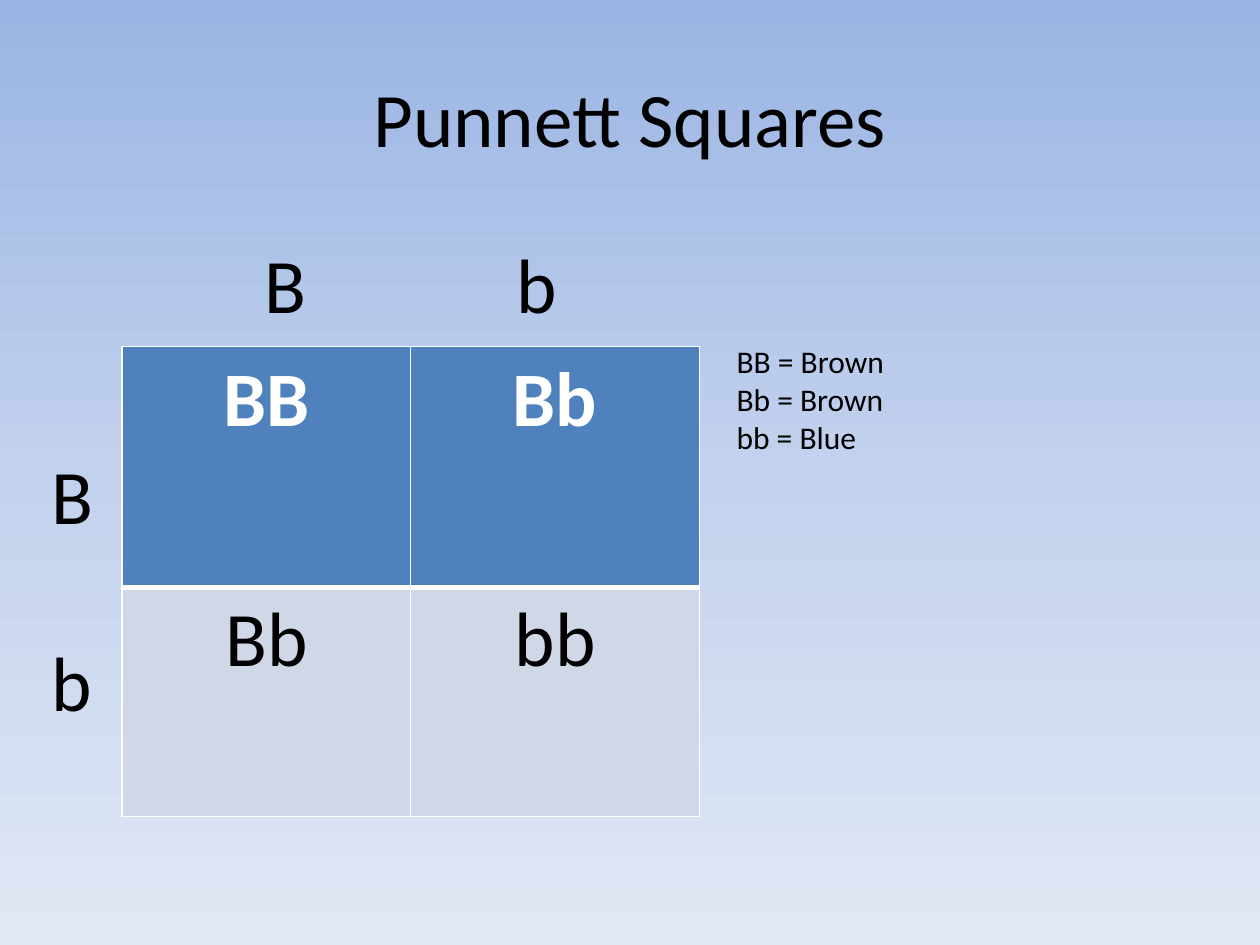
from copy import deepcopy

from lxml.etree import SubElement
from pptx import Presentation
from pptx.dml.color import RGBColor
from pptx.enum.text import MSO_ANCHOR, PP_ALIGN
from pptx.oxml.ns import qn
from pptx.util import Cm, Pt

BLACK = RGBColor(0x00, 0x00, 0x00)
WHITE = RGBColor(0xFF, 0xFF, 0xFF)
BLUE = RGBColor(0x4F, 0x81, 0xBD)
PALE = RGBColor(0xD0, 0xD8, 0xE8)
SKY = [RGBColor(0x9A, 0xB5, 0xE4), RGBColor(0xC2, 0xD1, 0xED), RGBColor(0xE1, 0xE8, 0xF5)]

LARGE = {"name": "Calibri", "size": Pt(44), "bold": False}
SMALL = {**LARGE, "size": Pt(18)}


def set_font(font, formats, color=BLACK):
    for name, value in formats.items():
        setattr(font, name, value)
    font.color.rgb = color


def add_background(s):
    fill = s.background.fill
    fill.gradient()
    fill.gradient_angle = 270
    # A third stop is needed between the two default ones
    first = s.background._cSld.find(".//" + qn("a:gs"))
    first.addnext(deepcopy(first))
    for stop, color, position in zip(fill.gradient_stops, SKY, (0, 0.5, 1)):
        stop.color.rgb = color
        stop.position = position


def add_title(s, box, text):
    title = s.shapes.title
    title.left, title.top, title.width, title.height = map(Cm, box)
    tf = title.text_frame
    tf.text = text
    tf.vertical_anchor = MSO_ANCHOR.MIDDLE
    p = tf.paragraphs[0]
    p.alignment = PP_ALIGN.CENTER
    set_font(p.runs[0].font, LARGE)


def add_text(s, box, lines, formats, gap=0):
    """Add one paragraph per line, with gap points between them."""
    tf = s.shapes.add_textbox(*map(Cm, box)).text_frame
    tf.word_wrap = True
    for i, line in enumerate(lines):
        p = tf.paragraphs[0] if i == 0 else tf.add_paragraph()
        p.space_before = Pt(gap if i else 0)
        r = p.add_run()
        r.text = line
        set_font(r.font, formats)
    return tf


def add_column_labels(s, box, alleles, tab_stops):
    tf = add_text(s, box, ["".join("\t" + a for a in alleles)], LARGE)
    tabs = SubElement(tf.paragraphs[0]._p.get_or_add_pPr(), qn("a:tabLst"))
    for stop in tab_stops:
        SubElement(tabs, qn("a:tab"), pos=str(Cm(stop)), algn="l")


def add_borders(cell, widths):
    tcPr = cell._tc.get_or_add_tcPr()
    for side, width in widths.items():
        ln = SubElement(tcPr, qn("a:ln" + side), w=str(Pt(width)))
        SubElement(SubElement(ln, qn("a:solidFill")), qn("a:srgbClr"), val=str(WHITE))


def add_square(s, box, genotypes, row_heights):
    left, top, width = box
    table = s.shapes.add_table(2, 2, Cm(left), Cm(top), Cm(width),
                               Cm(sum(row_heights))).table
    # Fill, text colour, bold, top and bottom border of each row
    styles = [(BLUE, WHITE, True, 1, 3), (PALE, BLACK, False, 3, 1)]
    for i, (fill, color, bold, upper, lower) in enumerate(styles):
        table.rows[i].height = Cm(row_heights[i])
        for j, genotype in enumerate(genotypes[i]):
            cell = table.cell(i, j)
            add_borders(cell, {"L": 1, "R": 1, "T": upper, "B": lower})
            cell.fill.solid()
            cell.fill.fore_color.rgb = fill
            cell.text = genotype
            p = cell.text_frame.paragraphs[0]
            p.alignment = PP_ALIGN.CENTER
            set_font(p.runs[0].font, {**LARGE, "bold": bold}, color)


def main():
    prs = Presentation()
    prs.slide_width, prs.slide_height = Cm(25.4), Cm(19.05)
    s = prs.slides.add_slide(prs.slide_layouts[5])
    add_background(s)
    add_title(s, (1.27, 0.76, 22.86, 3.18), "Punnett Squares")

    # Square with the parents' alleles along its sides
    add_square(s, (2.46, 6.99, 11.64), [["BB", "Bb"], ["Bb", "bb"]], [4.85, 4.62])
    add_text(s, (0.79, 8.89, 1.27, 8.56), ["B", "b"], LARGE, gap=54)
    add_column_labels(s, (2.54, 4.65, 10.8, 2.13), ["B", "b"], [2.54, 7.62])

    # Key to the eye colours
    add_text(s, (14.6, 6.78, 8.26, 2.57), ["BB = Brown", "Bb = Brown", "bb = Blue"], SMALL)
    prs.save("out.pptx")


if __name__ == "__main__":
    main()
